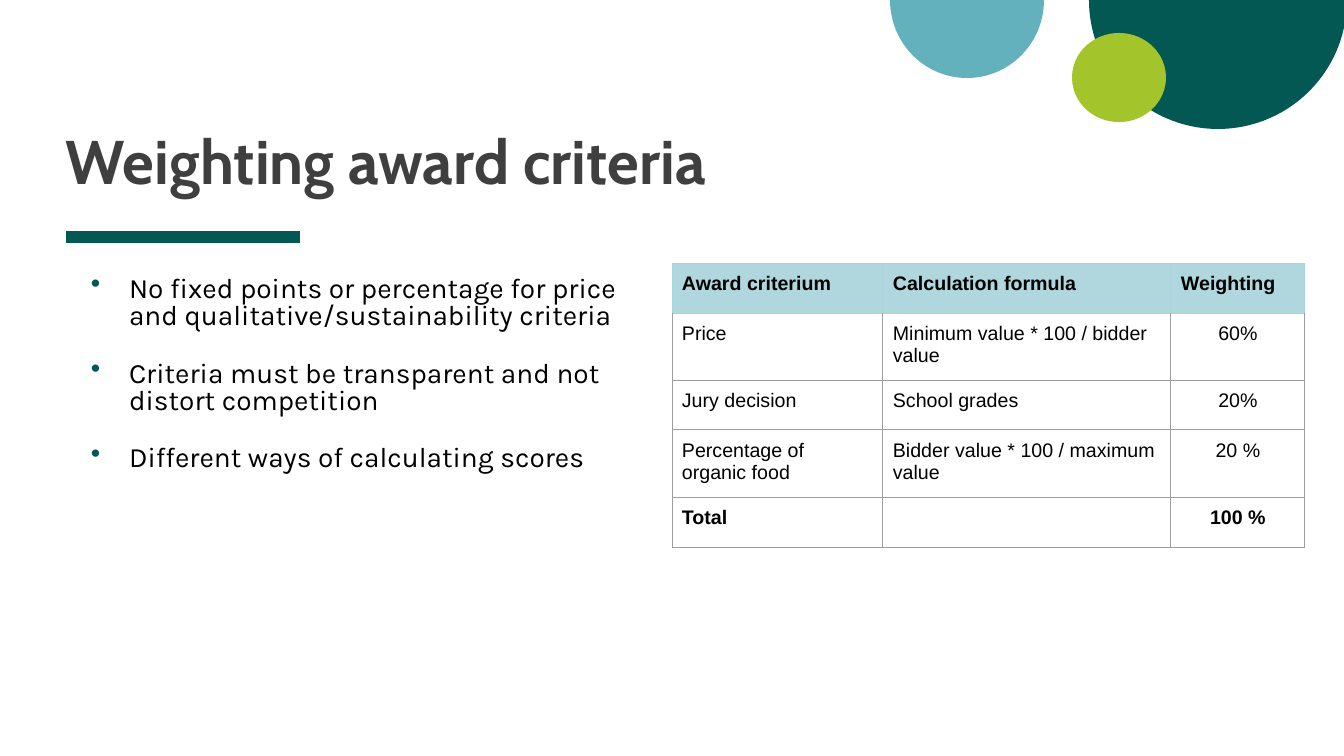
"""Build the slide on weighting award criteria."""
from dataclasses import dataclass

from lxml import etree
from pptx import Presentation, util as u
from pptx.dml.color import RGBColor
from pptx.enum import shapes, text
from pptx.oxml import parse_xml
from pptx.oxml.ns import nsdecls, qn


@dataclass(frozen=True)
class Theme:
    dark_green: str = "035854"
    blue: str = "64B1BE"
    lime: str = "A3C42A"
    heading: str = "3F3F3F"
    body: str = "000000"
    header_fill: str = "AFD7DD"
    header_border: str = "A9D4DB"
    border: str = "9E9E9E"
    title_size: int = 44
    body_size: int = 20
    table_size: int = 14


theme = Theme()
EMU_PER_PX = 914400 / 100.8


def px(*lengths):
    return [u.Emu(round(length * EMU_PER_PX)) for length in lengths]


def style(paragraph, name, size, color, bold=False):
    for run in paragraph.runs:
        run.font.name = name
        run.font.size = u.Pt(size)
        run.font.bold = bold
        run.font.color.rgb = RGBColor.from_string(color)


presentation = Presentation()
presentation.slide_width, presentation.slide_height = px(1344, 756)
slide = presentation.slides.add_slide(presentation.slide_layouts[6])

PIE, OVAL = shapes.MSO_SHAPE.PIE, shapes.MSO_SHAPE.OVAL
circles = [
    (PIE, (1089, -129, 258, 258), theme.dark_green),
    (PIE, (890, -78, 154, 156), theme.blue),
    (OVAL, (1072, 33, 94, 89), theme.lime),
]
for kind, box, color in circles:
    circle = slide.shapes.add_shape(kind, *px(*box))
    circle.shadow.inherit = False
    circle.fill.solid()
    circle.fill.fore_color.rgb = RGBColor.from_string(color)
    circle.line.fill.background()
    if kind == PIE:
        circle.adjustments[0] = 0
        circle.adjustments[1] = 108

rule = slide.shapes.add_connector(shapes.MSO_CONNECTOR.STRAIGHT, *px(66, 237, 300, 237))
rule.line.color.rgb = RGBColor.from_string(theme.dark_green)
rule.line.width = u.Pt(8)
etree.SubElement(rule._element.spPr, qn("a:effectLst"))

title = slide.shapes.add_textbox(*px(66, 21, 748, 175)).text_frame
title.vertical_anchor = text.MSO_ANCHOR.BOTTOM
title.text = "Weighting award criteria"
title.paragraphs[0].line_spacing = 0.8
style(title.paragraphs[0], "Cabin", theme.title_size, theme.heading, bold=True)

body = slide.shapes.add_textbox(*px(66, 252, 578, 473)).text_frame
body.text = "\n".join([
    "No fixed points or percentage for price and qualitative/sustainability criteria",
    "Criteria must be transparent and not distort competition",
    "Different ways of calculating scores",
])
for frame, top_inset in ((title, 0), (body, 25)):
    frame.word_wrap = True
    frame.margin_left = frame.margin_right = frame.margin_bottom = 0
    frame.margin_top = px(top_inset)[0]

indent, hanging = px(63, -38)
for index, paragraph in enumerate(body.paragraphs):
    properties = paragraph._p.get_or_add_pPr()
    properties.set("marL", str(indent))
    properties.set("indent", str(hanging))
    bullet_color = etree.SubElement(properties, qn("a:buClr"))
    etree.SubElement(bullet_color, qn("a:srgbClr"), val=theme.dark_green)
    etree.SubElement(properties, qn("a:buChar"), char="•")
    paragraph.line_spacing = 0.8
    paragraph.space_before = u.Pt(22 if index else 0)
    style(paragraph, "Karla", theme.body_size, theme.body)

rows = [
    ("Award criterium", "Calculation formula", "Weighting"),
    ("Price", "Minimum value * 100 / bidder value", "60%"),
    ("Jury decision", "School grades", "20%"),
    ("Percentage of organic food", "Bidder value * 100 / maximum value", "20 %"),
    ("Total", "", "100 %"),
]
column_widths = px(211, 288, 134)
table = slide.shapes.add_table(len(rows), 3, *px(672, 263, 633, 250)).table
table.first_row = table.horz_banding = False
for column, width in zip(table.columns, column_widths):
    column.width = width

inset = px(10)[0]
for row_index, values in enumerate(rows):
    is_header = row_index == 0
    table.rows[row_index].height = px(50)[0]
    for column_index, value in enumerate(values):
        cell = table.cell(row_index, column_index)
        cell.margin_left = cell.margin_right = inset
        cell.margin_top = cell.margin_bottom = inset
        cell.text = value
        paragraph = cell.text_frame.paragraphs[0]
        if column_index == 2 and not is_header:
            paragraph.alignment = text.PP_ALIGN.CENTER
        style(paragraph, "Arial", theme.table_size, theme.body,
              bold=row_index in (0, len(rows) - 1))

        for side in "LRTB":
            header_edge = is_header or (row_index == 1 and side == "T")
            color = theme.header_border if header_edge else theme.border
            cell._tc.get_or_add_tcPr().append(parse_xml(
                f'<a:ln{side} {nsdecls("a")} w="{u.Pt(0.75)}"><a:solidFill>'
                f'<a:srgbClr val="{color}"/></a:solidFill></a:ln{side}>'))
        if is_header:
            cell.fill.solid()
            cell.fill.fore_color.rgb = RGBColor.from_string(theme.header_fill)
        else:
            cell.fill.background()

presentation.save("out.pptx")
